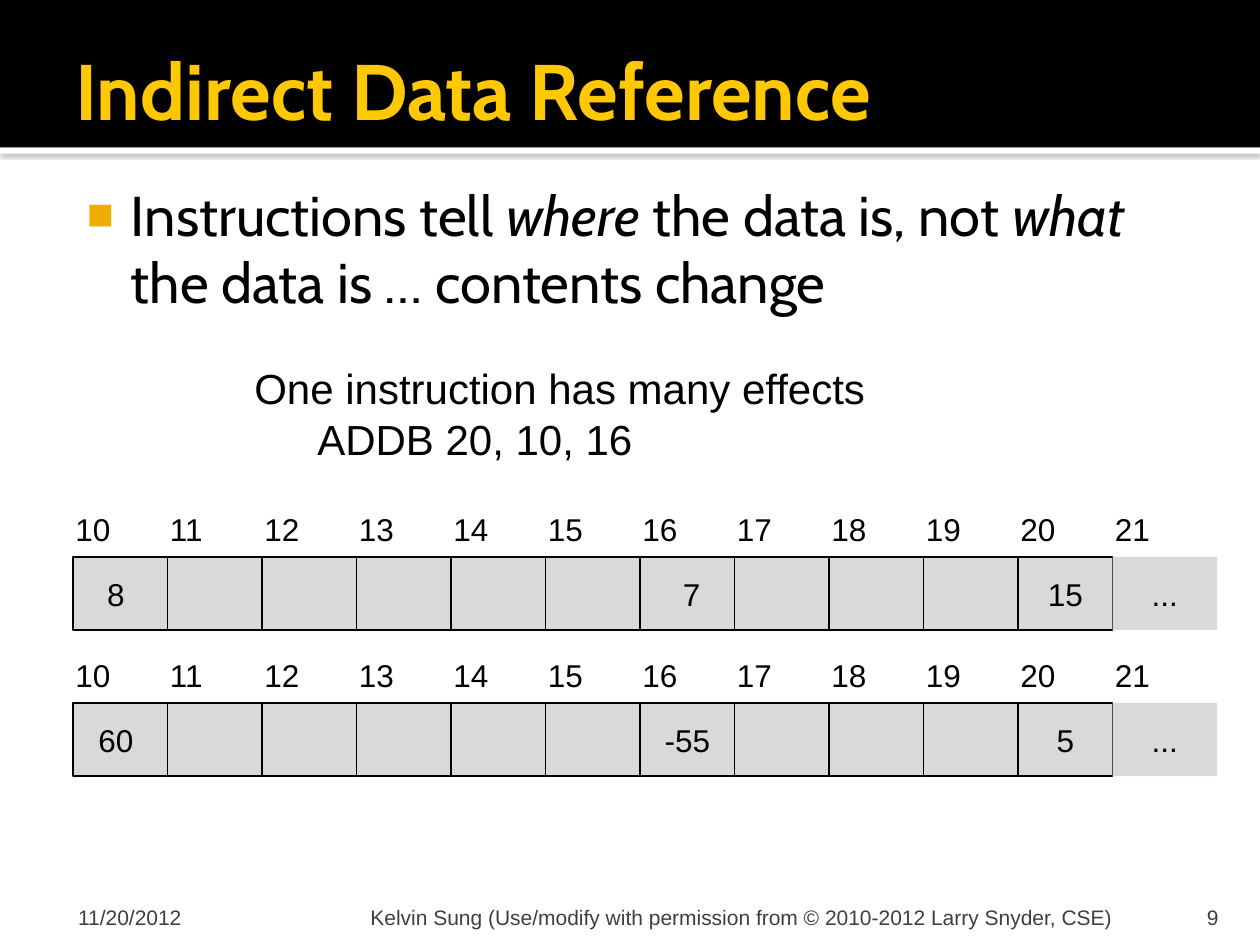
from dataclasses import dataclass

import lxml.etree
import pptx
import pptx.dml.color
import pptx.enum.shapes
import pptx.enum.text
import pptx.oxml
import pptx.oxml.ns
import pptx.util

Inches = pptx.util.Inches
Pt = pptx.util.Pt
Align = pptx.enum.text.PP_ALIGN
Anchor = pptx.enum.text.MSO_ANCHOR


@dataclass(frozen=True)
class Theme:
    """Colours, fonts and type sizes of the slide."""
    black: str = "000000"
    white: str = "FFFFFF"
    gold: str = "FFC800"
    bullet: str = "F0AD00"
    cell: str = "D9D9D9"
    footer: str = "3F3F3F"
    heading_font: str = "Cabin"
    plain_font: str = "Arial"
    title_size: int = 45
    body_size: int = 32
    example_size: int = 24
    cell_size: int = 18
    footer_size: int = 12


THEME = Theme()


def rgb(colour):
    """Turn a hex string into a colour."""
    return pptx.dml.color.RGBColor.from_string(colour)


def set_frame(shape, insets=(0.1, 0.05, 0.1, 0.05), anchor=Anchor.TOP):
    """Set wrapping, insets and anchor, and return the text frame."""
    frame = shape.text_frame
    frame.word_wrap = True
    frame.vertical_anchor = anchor
    frame.margin_left, frame.margin_top, frame.margin_right, frame.margin_bottom = map(Inches, insets)
    return frame


def style(paragraph, size, colour=THEME.black, font=THEME.plain_font, align=Align.LEFT):
    """Set the font and alignment of a paragraph."""
    paragraph.alignment = align
    paragraph.font.size = Pt(size)
    paragraph.font.name = font
    paragraph.font.color.rgb = rgb(colour)


def add_text(slide, box, lines, size, colour=THEME.black, font=THEME.plain_font,
             align=Align.LEFT, **frame_options):
    """Add a text box with one paragraph per line."""
    frame = set_frame(slide.shapes.add_textbox(*map(Inches, box)), **frame_options)
    frame.text = lines
    for paragraph in frame.paragraphs:
        style(paragraph, size, colour, font, align)
    return frame


def add_block(slide, box, fill, line=None):
    """Add a flat rectangle with an optional outline."""
    block = slide.shapes.add_shape(pptx.enum.shapes.MSO_SHAPE.RECTANGLE, *map(Inches, box))
    block.shadow.inherit = False
    block.fill.solid()
    block.fill.fore_color.rgb = rgb(fill)
    if line:
        block.line.color.rgb = rgb(line)
        block.line.width = Pt(0.75)
    else:
        block.line.fill.background()
    return block


def add_header(slide, left, top, width, height):
    """Draw the black title band with its shadowed white rule."""
    rule = add_block(slide, (left, top + height, width, 0.05), THEME.white)
    effects = rule._element.spPr.find(pptx.oxml.ns.qn("a:effectLst"))
    effects.append(pptx.oxml.parse_xml(
        f'<a:outerShdw {pptx.oxml.ns.nsdecls("a")} blurRad="{Pt(2.5)}" dist="{Pt(0.8)}" '
        'dir="5400000" rotWithShape="0"><a:srgbClr val="808080"><a:alpha val="60000"/>'
        '</a:srgbClr></a:outerShdw>'))
    add_block(slide, (left, top, width, height), THEME.black)
    title = add_text(slide, (left + 0.5, top + 0.17, width - 1, 1.08), "Indirect Data Reference",
                     THEME.title_size, THEME.gold, THEME.heading_font,
                     insets=(0.1, 0.05, 0.05, 0.05), anchor=Anchor.MIDDLE)
    title.paragraphs[0].font.bold = True


def add_body(slide, *box):
    """Write the bulleted statement with its emphasised words."""
    frame = add_text(slide, box, "", THEME.body_size, font=THEME.heading_font,
                     insets=(0.06, 0.1, 0.1, 0.05))
    statement = frame.paragraphs[0]
    phrases = ("Instructions tell ", "where", " the data is, not ", "what",
               " the data is … contents change")
    for index, phrase in enumerate(phrases):
        run = statement.add_run()
        run.text = phrase
        if index % 2:
            run.font.italic = True
    properties = statement._p.get_or_add_pPr()
    properties.set("marL", str(Inches(0.48)))
    properties.set("indent", str(Inches(-0.35)))
    bullet = pptx.oxml.parse_xml(
        f'<a:pPr {pptx.oxml.ns.nsdecls("a")}><a:buClr><a:srgbClr val="{THEME.bullet}"/></a:buClr>'
        '<a:buSzPct val="80000"/><a:buFont typeface="Arial"/><a:buChar char="■"/></a:pPr>')
    for position, part in enumerate(list(bullet)):
        properties.insert(position, part)


def add_memory(slide, left, top, contents, first=10, last=21, pitch=0.75):
    """Draw a row of addressed memory cells, the last one open-ended."""
    for address in range(first, last + 1):
        x = left + (address - first) * pitch
        is_last = address == last
        cell = add_block(slide, (x + 0.08, top + 0.42, 0.83 if is_last else pitch, 0.58),
                         THEME.cell, None if is_last else THEME.black)
        if address in contents:
            frame = set_frame(cell, anchor=Anchor.MIDDLE)
            frame.text = contents[address]
            style(frame.paragraphs[0], THEME.cell_size, align=Align.CENTER)
        add_text(slide, (x, top, 0.57, 0.5), str(address), THEME.cell_size)


def add_footer(slide, left, top, height):
    """Write the date, credit and slide number along the bottom."""
    parts = (
        (0, 2.33, "11/20/2012", Align.LEFT, 0.12, 0.05),
        (2.39, 6.02, "Kelvin Sung (Use/modify with permission from © 2010-2012 Larry Snyder, CSE)",
         Align.LEFT, 0.05, 0.05),
        (8.47, 0.8, "9", Align.RIGHT, 0.1, 0.1),
    )
    for offset, width, words, align, inset_left, inset_right in parts:
        add_text(slide, (left + offset, top, width, height), words, THEME.footer_size,
                 THEME.footer, align=align, insets=(inset_left, 0.05, inset_right, 0),
                 anchor=Anchor.BOTTOM)


def main():
    """Build and save the slide."""
    deck = pptx.Presentation()
    deck.slide_width, deck.slide_height = Inches(10), Inches(7.5)
    slide = deck.slides.add_slide(deck.slide_layouts[6])
    add_header(slide, 0, 0, 10, 1.17)
    add_footer(slide, 0.5, 7.08, 0.3)
    add_body(slide, 0.5, 1.33, 9, 5.67)
    add_text(slide, (1.92, 2.83, 5.12, 0.91),
             "One instruction has many effects\n\tADDB 20, 10, 16", THEME.example_size)
    add_memory(slide, 0.5, 4, {10: "8 ", 16: " 7", 20: "15", 21: "..."})
    add_memory(slide, 0.5, 5.16, {10: "60 ", 16: "-55", 20: "5", 21: "..."})
    deck.save("out.pptx")


if __name__ == "__main__":
    main()
